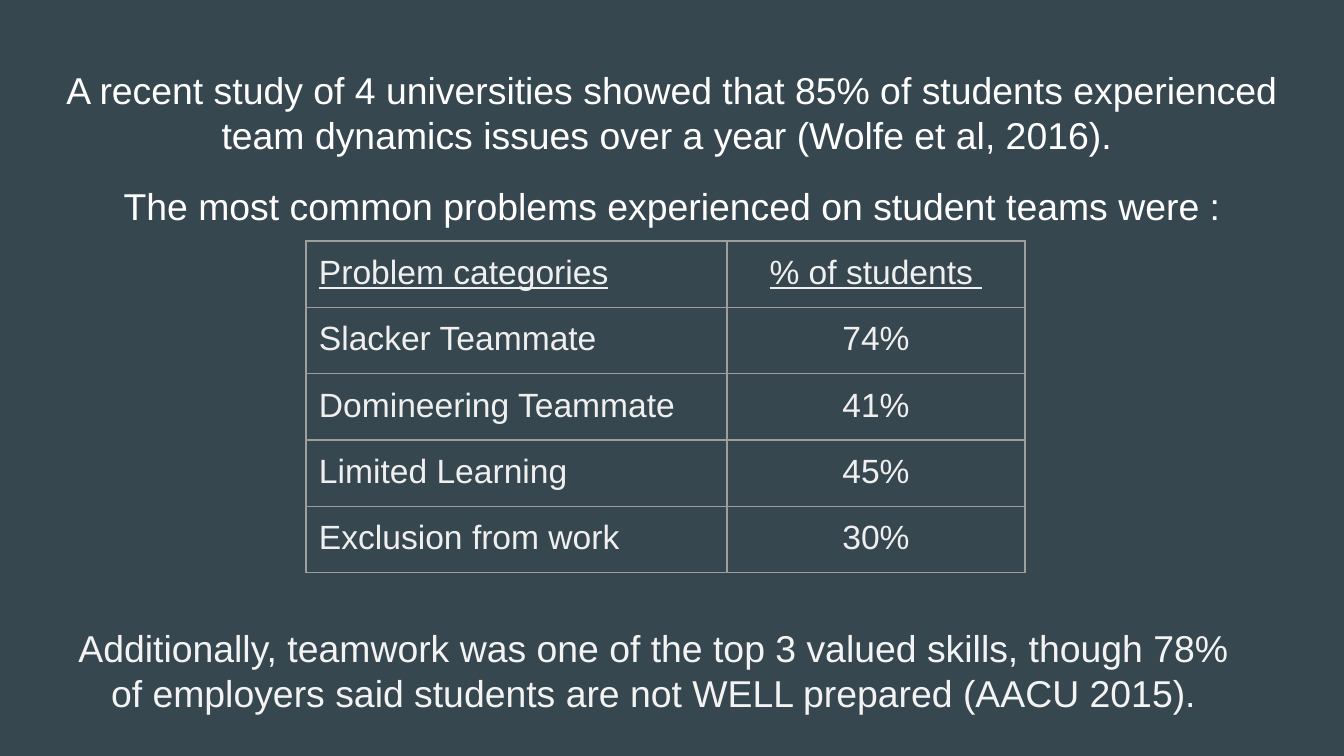
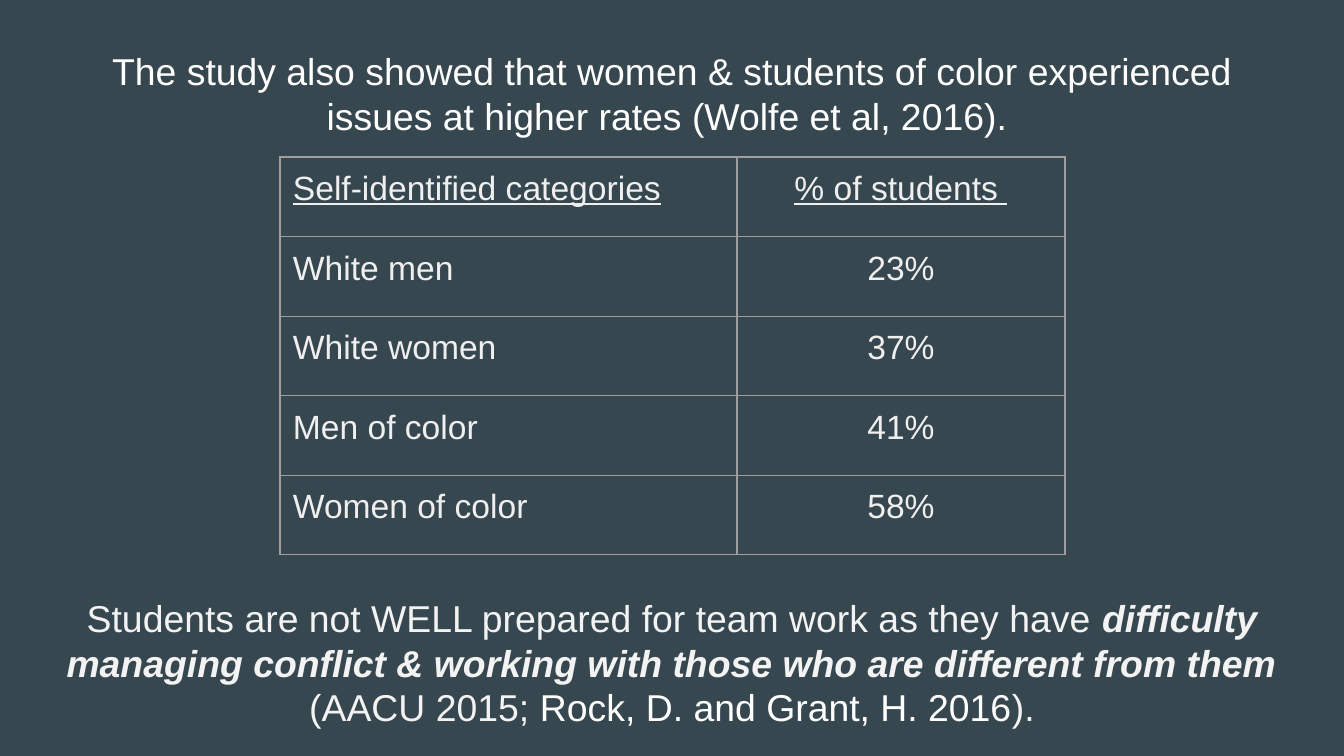
from lxml import etree
from pptx import Presentation
from pptx.dml.color import RGBColor
from pptx.enum.text import MSO_ANCHOR, PP_ALIGN
from pptx.oxml.ns import qn
from pptx.util import Pt

SLIDE_W, SLIDE_H = 1344, 756
EMU_PER_PX = 9144000 / SLIDE_W
INSET = 13
LEFT, CENTER = PP_ALIGN.LEFT, PP_ALIGN.CENTER
TOP = MSO_ANCHOR.TOP

FONT = "Arial"
BACKGROUND = "37474F"
TITLE_COLOR = "FFFFFF"
TABLE_COLOR = "EFEFEF"
CLOSING_COLOR = "F3F3F3"
BORDER_COLOR = "9E9E9E"
BODY_SIZE, TABLE_SIZE = 20, 18
BORDER_WIDTH = 0.75


def px(length):
    return round(length * EMU_PER_PX)


def rgb(color):
    return RGBColor.from_string(color)


class Deck:
    """Holds the shared style and the slide being filled."""

    def __init__(self):
        self.prs = Presentation()
        self.prs.slide_width, self.prs.slide_height = px(SLIDE_W), px(SLIDE_H)
        self.slide = None

    def new_slide(self):
        self.slide = self.prs.slides.add_slide(self.prs.slide_layouts[6])
        fill = self.slide.background.fill
        fill.solid()
        fill.fore_color.rgb = rgb(BACKGROUND)

    def style_run(self, run, size, color, underline=False, emphasis=False):
        font = run.font
        font.name, font.size, font.color.rgb = FONT, Pt(size), rgb(color)
        font.underline = underline
        font.bold = font.italic = emphasis

    def text(self, box, paragraphs, color, gap=0):
        """Each paragraph is a list of (text, run style) pairs."""
        frame = self.slide.shapes.add_textbox(*map(px, box)).text_frame
        frame.word_wrap = True
        frame.vertical_anchor = TOP
        frame.margin_left = frame.margin_right = px(INSET)
        frame.margin_top = frame.margin_bottom = px(INSET)
        for i, pieces in enumerate(paragraphs):
            paragraph = frame.add_paragraph() if i else frame.paragraphs[0]
            paragraph.alignment = CENTER
            paragraph.space_before = Pt(gap if i else 0)
            for words, style in pieces:
                run = paragraph.add_run()
                run.text = words
                self.style_run(run, BODY_SIZE, **{"color": color, **style})

    def title(self, top, height, *sentences):
        self.text((46, top, 1253, height), [[(s, {})] for s in sentences],
                  TITLE_COLOR, gap=14)

    def closing(self, box, *pieces):
        self.text(box, [pieces], CLOSING_COLOR)

    def border(self, cell):
        properties = cell._tc.get_or_add_tcPr()
        for side in ("lnL", "lnR", "lnT", "lnB"):
            line = etree.SubElement(properties, qn(f"a:{side}"),
                                    w=str(Pt(BORDER_WIDTH)))
            fill = etree.SubElement(line, qn("a:solidFill"))
            etree.SubElement(fill, qn("a:srgbClr"), val=BORDER_COLOR)

    def table(self, left, top, widths, height, rows):
        table = self.slide.shapes.add_table(
            len(rows), len(widths), px(left), px(top),
            px(sum(widths)), px(height)).table
        table.first_row = table.horz_banding = False
        for column, width in zip(table.columns, widths):
            column.width = px(width)
        for r, row in enumerate(rows):
            for c, words in enumerate(row):
                self.cell(table.cell(r, c), words, CENTER if c else LEFT, r == 0)

    def cell(self, cell, words, alignment, is_header):
        cell.margin_left = cell.margin_right = px(INSET)
        cell.margin_top = cell.margin_bottom = px(INSET)
        cell.vertical_anchor = TOP
        self.border(cell)
        cell.fill.background()
        paragraph = cell.text_frame.paragraphs[0]
        paragraph.text = words
        paragraph.alignment = alignment
        self.style_run(paragraph.runs[0], TABLE_SIZE, TABLE_COLOR,
                       underline=is_header)


def common_problems(deck):
    deck.new_slide()
    deck.title(
        54, 187,
        "A recent study of 4 universities showed that 85% of students "
        "experienced team dynamics issues over a year (Wolfe et al, 2016). ",
        "The most common problems experienced on student teams were :")
    deck.table(306, 241, (421, 298), 323, [
        ("Problem categories", "% of students "),
        ("Slacker Teammate", "74%"),
        ("Domineering Teammate", "41%"),
        ("Limited Learning", "45%"),
        ("Exclusion from work", "30%"),
    ])
    deck.closing(
        (54, 612, 1200, 132),
        ("Additionally, teamwork was one of the top 3 valued skills, though 78% "
         "of employers said students are not WELL prepared (AACU 2015).", {}))


def rates_by_identity(deck):
    deck.new_slide()
    deck.title(
        35, 122,
        "The study also showed that women & students of color experienced "
        "issues at higher rates (Wolfe et al, 2016). ")
    deck.table(280, 157, (457, 328), 398, [
        ("Self-identified categories", "% of students "),
        ("White men", "23%"),
        ("White women", "37%"),
        ("Men of color", "41%"),
        ("Women of color", "58%"),
    ])
    deck.closing(
        (17, 582, 1310, 153),
        ("Students are not WELL prepared for team work as they have ", {}),
        ("difficulty managing conflict & working with those who are different "
         "from them ", {"emphasis": True}),
        ("(AACU 2015; ", {}),
        ("Rock, D. and Grant, H. 2016", {"color": TITLE_COLOR}),
        (").", {}))


def main():
    deck = Deck()
    common_problems(deck)
    rates_by_identity(deck)
    deck.prs.save("out.pptx")


if __name__ == "__main__":
    main()
